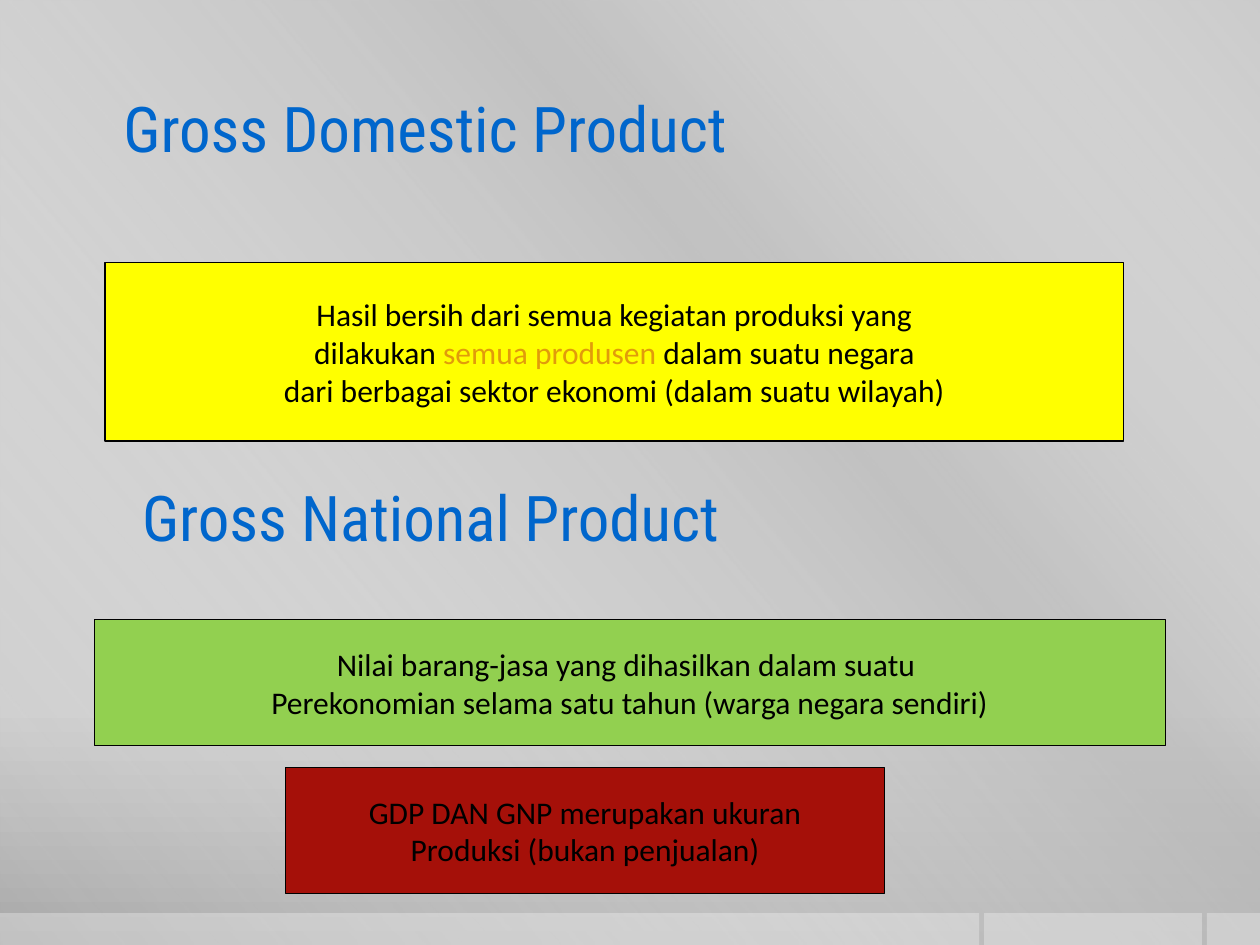
from lxml import etree
from pptx import Presentation
from pptx.dml.color import RGBColor
from pptx.enum import shapes, text
from pptx.oxml.ns import qn
from pptx.util import Cm, Pt

BLACK = RGBColor(0x00, 0x00, 0x00)
WHITE = RGBColor(0xFF, 0xFF, 0xFF)
BLUE = RGBColor(0x00, 0x66, 0xCC)
PALE_BLUE = RGBColor(0x99, 0xCC, 0xFF)
YELLOW = RGBColor(0xFF, 0xFF, 0x00)
ORANGE = RGBColor(0xE1, 0x9B, 0x0B)
GREEN = RGBColor(0x92, 0xD0, 0x50)
RED = RGBColor(0xA5, 0x10, 0x09)
MID_GREY = RGBColor(0xBF, 0xBF, 0xBF)
TOP_GREY = RGBColor(0xCB, 0xCB, 0xCB)
LOW_GREY = RGBColor(0xC8, 0xC8, 0xC8)
BASE_GREY = RGBColor(0xA7, 0xA7, 0xA7)

WIDTH, HEIGHT = 25.4, 19.05


def add_color(parent, color, opacity=100):
    clr = etree.SubElement(parent, qn("a:srgbClr"), val=str(color))
    if opacity < 100:
        etree.SubElement(clr, qn("a:alpha"), val=str(opacity * 1000))


def set_gradient(fill, owner, stops, angle):
    """Stops are (position %, colour, opacity %); angle runs clockwise."""
    fill.gradient()
    grad = next(owner.iter(qn("a:gradFill")))
    for child in list(grad):
        grad.remove(child)
    gs_list = etree.SubElement(grad, qn("a:gsLst"))
    for pos, color, opacity in stops:
        gs = etree.SubElement(gs_list, qn("a:gs"), pos=str(pos * 1000))
        add_color(gs, color, opacity)
    etree.SubElement(grad, qn("a:lin"), ang=str(angle * 60000), scaled="0")


def add_rect(parent, x, y, w, h):
    sp = parent.shapes.add_shape(shapes.MSO_SHAPE.RECTANGLE, Cm(x), Cm(y), Cm(w), Cm(h))
    sp.shadow.inherit = False
    sp.line.fill.background()
    return sp


def add_run(p, content, size=18, font="Calibri", color=BLACK, outline=None):
    r = p.add_run()
    r.text = content
    r.font.size = Pt(size)
    r.font.name = font
    r.font.color.rgb = color
    if outline is not None:
        ln = etree.Element(qn("a:ln"), w=str(Pt(1.5)))
        add_color(etree.SubElement(ln, qn("a:solidFill")), outline)
        r.font.fill  # the outline must come before the fill
        r._r.get_or_add_rPr().insert(0, ln)


def backdrop(s):
    bg = s.background
    set_gradient(bg.fill, s.element,
                 [(0, TOP_GREY, 100), (76, LOW_GREY, 100), (100, BASE_GREY, 100)], 90)
    sheen = add_rect(s, 0, 0, WIDTH, HEIGHT)
    set_gradient(sheen.fill, sheen.element,
                 [(0, WHITE, 0), (34, MID_GREY, 61), (38, MID_GREY, 76), (100, WHITE, 0)], 140)


def footer_bars(s, y, h, gap=0.1):
    group = s.shapes.add_group_shape()
    x = 0
    for w in (19.74, 4.39, 1.07):
        bar = add_rect(group, x, y, w, h)
        bar.fill.solid()
        bar.fill.fore_color.rgb = WHITE
        clr = next(bar.element.spPr.iter(qn("a:srgbClr")))
        etree.SubElement(clr, qn("a:alpha"), val="30000")
        x += w + gap


def heading(s, x, y, w, h, content):
    tf = s.shapes.add_textbox(Cm(x), Cm(y), Cm(w), Cm(h)).text_frame
    tf.word_wrap = False
    p = tf.paragraphs[0]
    p.alignment = text.PP_ALIGN.CENTER
    add_run(p, content, size=36, font="Roboto Condensed", color=BLUE, outline=PALE_BLUE)


def definition(s, x, y, w, h, fill, lines):
    """Each line is a list of (text, colour) pieces."""
    sp = add_rect(s, x, y, w, h)
    sp.fill.solid()
    sp.fill.fore_color.rgb = fill
    sp.line.color.rgb = BLACK
    sp.line.width = Pt(0.75)
    tf = sp.text_frame
    tf.word_wrap = False
    tf.vertical_anchor = text.MSO_ANCHOR.MIDDLE
    for i, pieces in enumerate(lines):
        p = tf.add_paragraph() if i else tf.paragraphs[0]
        p.alignment = text.PP_ALIGN.CENTER
        for content, color in pieces:
            add_run(p, content, color=color)


def main():
    prs = Presentation()
    prs.slide_width, prs.slide_height = Cm(WIDTH), Cm(HEIGHT)
    s = prs.slides.add_slide(prs.slide_layouts[6])

    backdrop(s)
    footer_bars(s, 18.41, 0.64)
    definition(s, 2.12, 5.29, 20.53, 3.6, YELLOW, [
        [("Hasil bersih dari semua kegiatan produksi yang", BLACK)],
        [(" dilakukan ", BLACK), ("semua produsen", ORANGE), (" dalam suatu negara ", BLACK)],
        [("dari berbagai sektor ekonomi (dalam suatu wilayah)", BLACK)],
    ])
    heading(s, 0.85, 1.69, 15.45, 2.33, "Gross Domestic Product")
    heading(s, 0.64, 9.53, 16.09, 2.54, "Gross National Product")
    definition(s, 1.9, 12.49, 21.59, 2.54, GREEN, [
        [("Nilai barang-jasa yang dihasilkan dalam suatu ", BLACK)],
        [("Perekonomian selama satu tahun (warga negara sendiri)", BLACK)],
    ])
    definition(s, 5.76, 15.47, 12.07, 2.54, RED, [
        [("GDP DAN GNP merupakan ukuran", BLACK)],
        [("Produksi (bukan penjualan)", BLACK)],
    ])
    prs.save("out.pptx")


if __name__ == "__main__":
    main()
